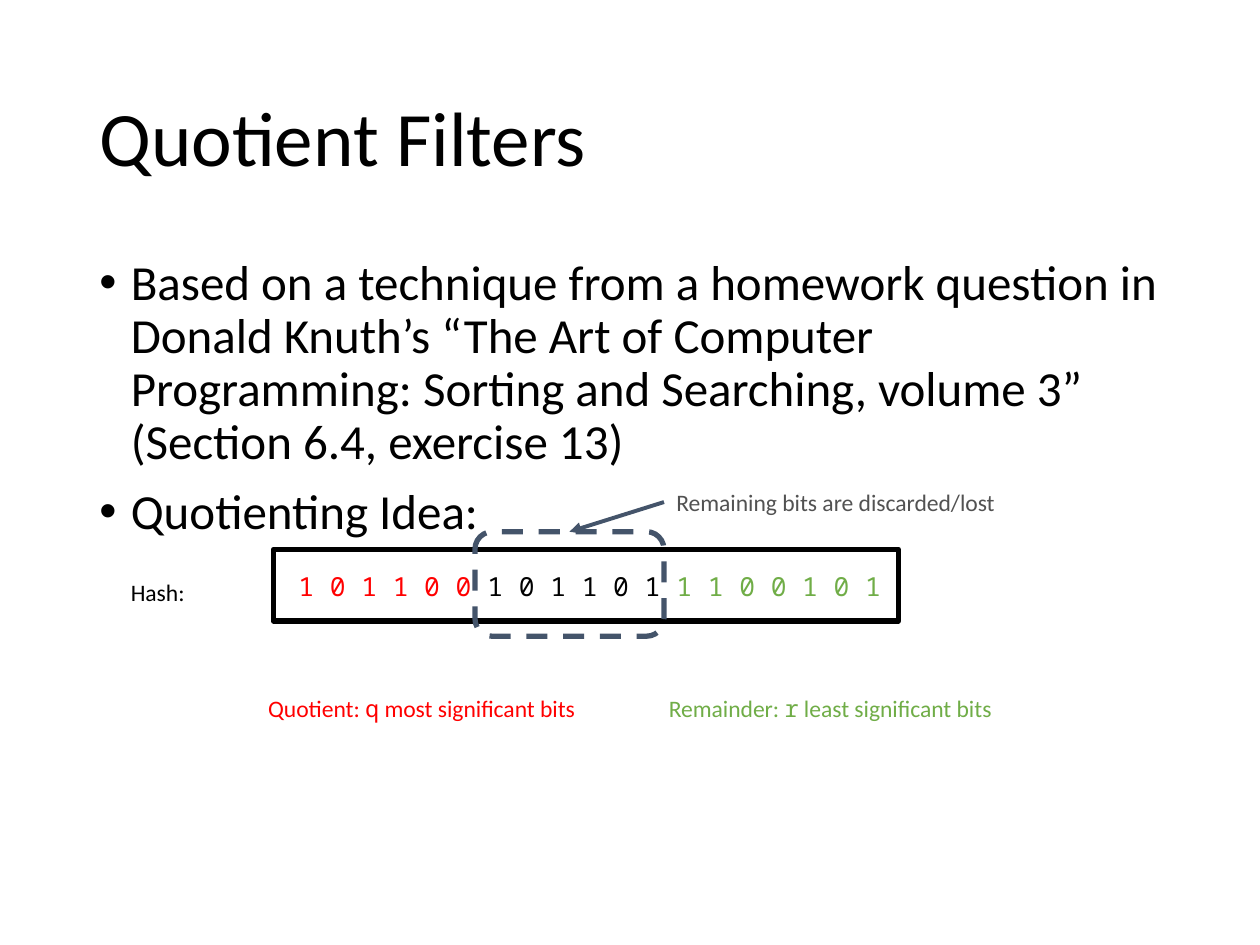
from lxml.etree import SubElement
from pptx import Presentation
from pptx.dml.color import RGBColor
from pptx.enum.dml import MSO_LINE_DASH_STYLE as Dash
from pptx.enum.shapes import MSO_CONNECTOR as Connector, MSO_SHAPE as Shape
from pptx.enum.text import MSO_ANCHOR as Anchor, MSO_AUTO_SIZE as AutoSize
from pptx.oxml.ns import qn
from pptx.util import Inches, Pt

BLACK = RGBColor(0x00, 0x00, 0x00)
RED = RGBColor(0xFF, 0x00, 0x00)
GREEN = RGBColor(0x70, 0xAD, 0x47)
SLATE = RGBColor(0x44, 0x54, 0x6A)
GRAY = RGBColor(0x52, 0x52, 0x52)
SANS = "Calibri"
MONO = "Noto Sans Mono"

LABEL_SIZE = 13.5
LABEL_HEIGHT = 0.33
LABEL_FRAME = {"word_wrap": False, "auto_size": AutoSize.SHAPE_TO_FIT_TEXT}
LARGE_FRAME = {"word_wrap": True, "auto_size": AutoSize.NONE}


def set_attributes(target, values):
    for name, value in values.items():
        setattr(target, name, value)


def add_spans(para, spans, size):
    """Each span is (text, font name, colour)."""
    for text, font, color in spans:
        span = para.add_run()
        span.text = text
        set_attributes(span.font, {"name": font, "size": Pt(size)})
        span.font.color.rgb = color


def add_text(shapes, place, paragraphs, size, frame_format, para_format=None):
    box = shapes.add_textbox(*map(Inches, place))
    frame = box.text_frame
    set_attributes(frame, frame_format)
    for index, spans in enumerate(paragraphs):
        para = frame.add_paragraph() if index else frame.paragraphs[0]
        set_attributes(para, para_format or {})
        add_spans(para, spans, size)
    return box


def add_label(shapes, left, top, width, spans, size=LABEL_SIZE, height=LABEL_HEIGHT):
    return add_text(shapes, (left, top, width, height), [spans], size, LABEL_FRAME)


def add_bullets(box):
    for para in box.text_frame.paragraphs:
        properties = para._p.get_or_add_pPr()
        properties.set("marL", str(Inches(0.25)))
        properties.set("indent", str(Inches(-0.25)))
        SubElement(properties, qn("a:buFont"), typeface="Arial")
        SubElement(properties, qn("a:buChar"), char="•")


def add_outline(shapes, kind, place, color, dash=None):
    outline = shapes.add_shape(kind, *map(Inches, place))
    outline.shadow.inherit = False
    outline.fill.background()
    outline.line.color.rgb = color
    set_attributes(outline.line, {"width": Pt(3), "dash_style": dash})
    return outline


def add_arrow(shapes, start, start_side, end, end_side):
    arrow = shapes.add_connector(Connector.STRAIGHT, 0, 0, 0, 0)
    arrow.begin_connect(start, start_side)
    arrow.end_connect(end, end_side)
    arrow.line.color.rgb = SLATE
    arrow.line.width = Pt(2.25)
    SubElement(arrow.line._get_or_add_ln(), qn("a:tailEnd"), type="triangle")
    SubElement(arrow._element.spPr, qn("a:effectLst"))


def main():
    deck = Presentation()
    set_attributes(deck, {"slide_width": Inches(10), "slide_height": Inches(7.5)})
    page = deck.slides.add_slide(deck.slide_layouts[6])
    shapes = page.shapes

    # Title and bullets
    add_text(shapes, (0.69, 0.4, 8.62, 1.45), [[("Quotient Filters", SANS, BLACK)]], 44,
             {**LARGE_FRAME, "vertical_anchor": Anchor.MIDDLE}, {"line_spacing": 0.9})
    points = [
        "Based on a technique from a homework question in Donald Knuth’s “The Art of "
        "Computer Programming: Sorting and Searching, volume 3” (Section 6.4, exercise 13)",
        "Quotienting Idea:",
    ]
    body = add_text(shapes, (0.69, 2, 8.62, 4.76), [[(point, SANS, BLACK)] for point in points],
                    28, LARGE_FRAME, {"line_spacing": 0.9, "space_before": Pt(10)})
    add_bullets(body)

    # Hash bits
    add_outline(shapes, Shape.RECTANGLE, (2.17, 4.36, 4.96, 0.57), BLACK)
    add_label(shapes, 0.94, 4.54, 0.63, [("Hash:", SANS, BLACK)])
    bits = [("1 0 1 1 0 0 ", MONO, RED), ("1 0 1 1 0 1 ", MONO, BLACK),
            ("1 1 0 0 1 0 1", MONO, GREEN)]
    add_label(shapes, 2.27, 4.48, 4.87, bits, size=15, height=0.35)

    # Captions for the two kept parts
    captions = [
        (2.03, 2.68, "Quotient: ", "q", " most significant bits", RED),
        (5.21, 2.81, "Remainder: ", "r", " least significant bits", GREEN),
    ]
    for left, width, name, symbol, meaning, color in captions:
        add_label(shapes, left, 5.46, width,
                  [(name, SANS, color), (symbol, MONO, color), (meaning, SANS, color)])

    # Discarded bits with their callout
    callout = shapes.add_group_shape().shapes
    discarded = add_outline(callout, Shape.ROUNDED_RECTANGLE, (3.77, 4.22, 1.5, 0.83),
                            SLATE, Dash.DASH)
    note = add_label(callout, 5.27, 3.82, 2.77,
                     [("Remaining bits are discarded/lost", SANS, GRAY)])
    add_arrow(callout, note, 1, discarded, 0)

    deck.save("out.pptx")


if __name__ == "__main__":
    main()
